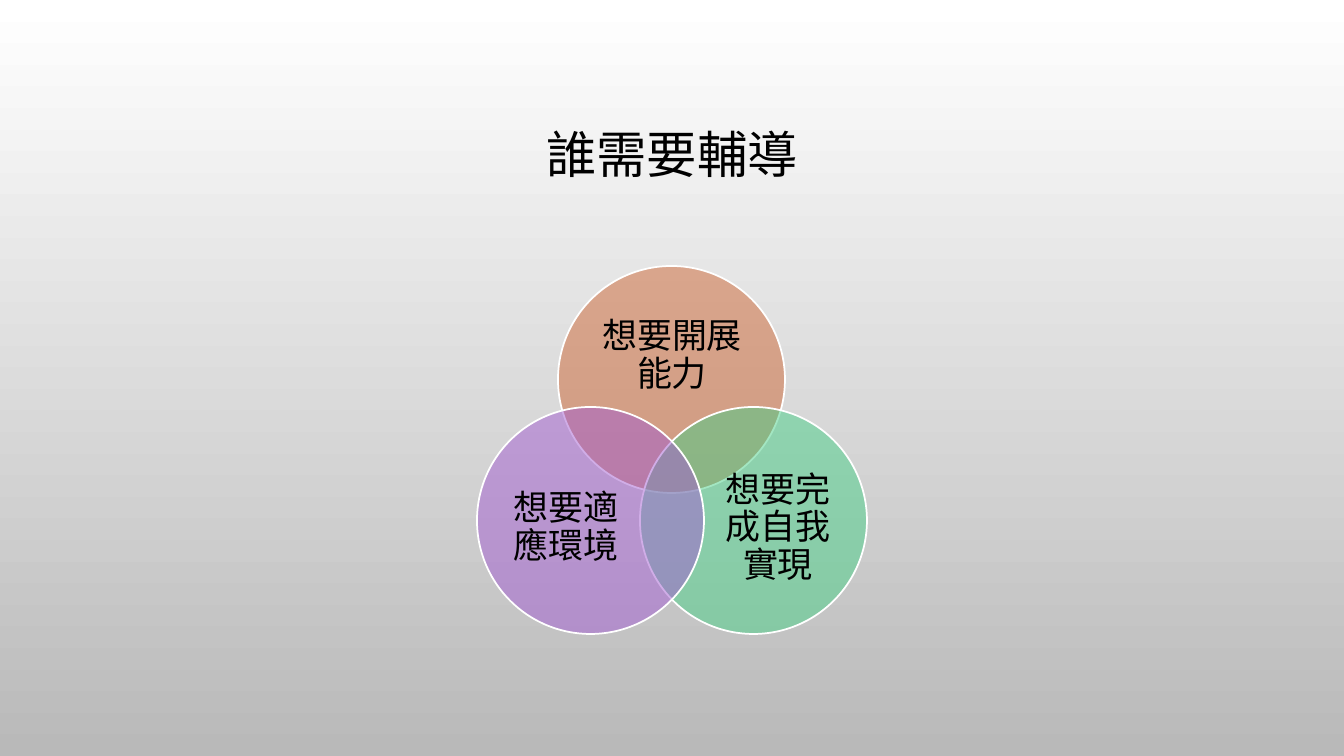
from lxml import etree
from pptx import Presentation
from pptx import util as u
from pptx.dml.color import RGBColor
from pptx.enum import shapes, text
from pptx.oxml.ns import qn

WIDE, HIGH = 1344, 756
SCALE = 12192000 / WIDE
COLORS = {
    "white": "FFFFFF", "gray": "B9B9B9", "black": "000000",
    "orange": "CE6633", "green": "48CF87", "purple": "A35DD1",
}


def px(n):
    return u.Emu(round(n * SCALE))


def color(name):
    return RGBColor.from_string(COLORS[name])


class Deck:
    font = "Calibri"

    def __init__(self):
        self.prs = Presentation()
        self.prs.slide_width, self.prs.slide_height = px(WIDE), px(HIGH)
        self.slide = self.prs.slides.add_slide(self.prs.slide_layouts[6])

    def backdrop(self, top, base):
        fill = self.slide.background.fill
        fill.gradient()
        fill.gradient_angle = 270
        for stop, name in zip(fill.gradient_stops, (top, base)):
            stop.color.rgb = color(name)

    def label(self, words, box, size):
        frame = self.slide.shapes.add_textbox(*map(px, box)).text_frame
        frame.word_wrap = True
        frame.vertical_anchor = text.MSO_ANCHOR.MIDDLE
        frame.margin_left = frame.margin_right = 0
        frame.margin_top = frame.margin_bottom = 0
        para = frame.paragraphs[0]
        para.text = words
        para.alignment = text.PP_ALIGN.CENTER
        para.line_spacing = 0.9
        para.font.name, para.font.size = self.font, u.Pt(size)
        para.font.color.rgb = color("black")

    def circle(self, left, top, size, name, alpha):
        oval = self.slide.shapes.add_shape(
            shapes.MSO_SHAPE.OVAL, *map(px, (left, top, size, size)))
        oval.shadow.inherit = False
        oval.fill.solid()
        oval.fill.fore_color.rgb = color(name)
        tint = oval.fill._xPr.find(qn("a:solidFill"))[0]
        etree.SubElement(tint, qn("a:alpha")).set("val", str(alpha * 1000))
        oval.line.color.rgb = color("white")
        oval.line.width = u.Pt(1.25)


def main():
    deck = Deck()
    deck.backdrop("white", "gray")

    # Title
    deck.label("誰需要輔導", (101, 69, 1142, 176), 36)

    # Venn diagram: circle corner, colour, words, text box
    venn = [
        (558, 266, "orange", "想要開展能力", (589, 305, 166, 102)),
        (640, 407, "green", "想要完成自我實現", (710, 466, 136, 125)),
        (477, 407, "purple", "想要適應環境", (498, 466, 136, 125)),
    ]
    for left, top, name, words, box in venn:
        deck.circle(left, top, 227, name, 50)
        deck.label(words, box, 25)

    deck.prs.save("out.pptx")


if __name__ == "__main__":
    main()
